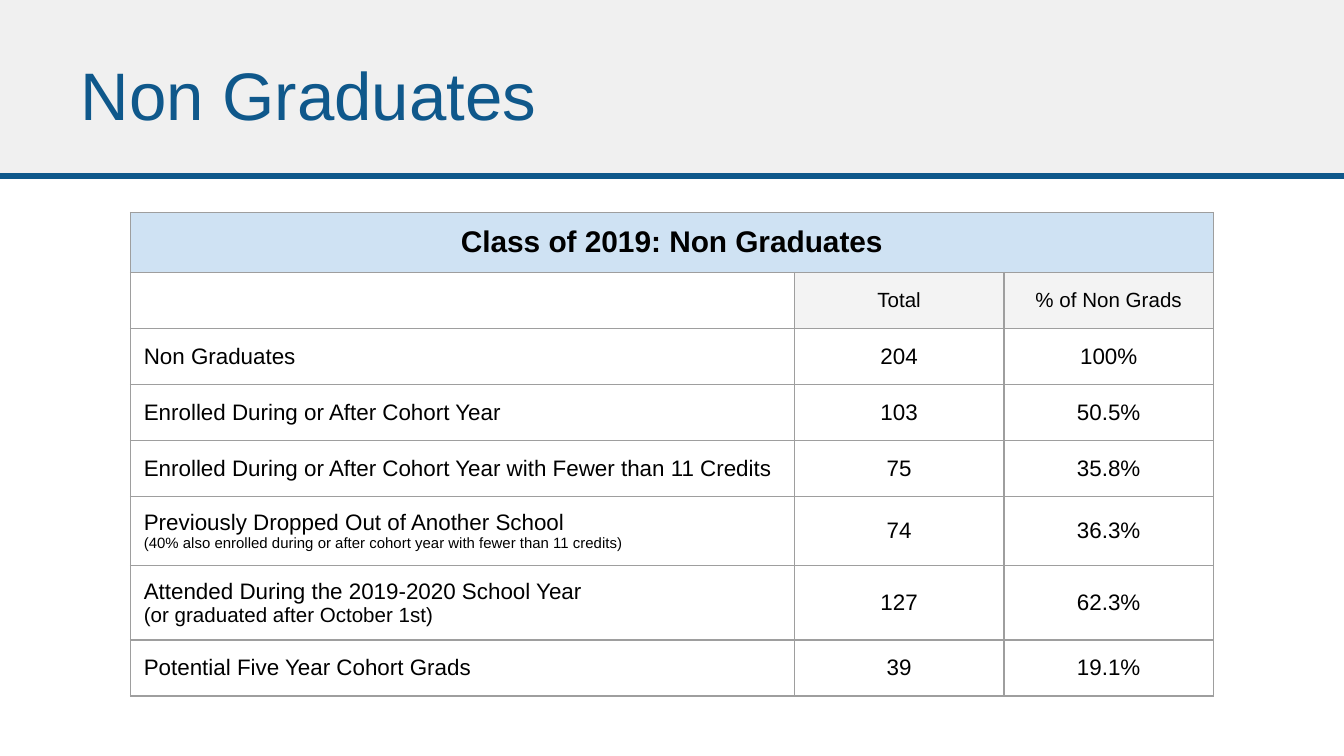
import pptx
import pptx.util
import pptx.dml.color
import pptx.enum.shapes
import pptx.enum.text
import pptx.oxml
import pptx.oxml.ns

WIDTH = pptx.util.Inches(10)
HEIGHT = WIDTH * 9 // 16
BAND_HEIGHT = pptx.util.Inches(1.31)
MARGIN = pptx.util.Inches(0.1)
COLUMN_WIDTHS = [4.94, 1.56, 1.56]
ROW_HEIGHT = pptx.util.Pt(30)
COLORS = {
    "band": "F0F0F0",
    "accent": "0F588B",
    "heading": "CFE2F3",
    "subheading": "F3F3F3",
    "body": "FFFFFF",
    "text": "000000",
    "border": "9E9E9E",
}
TABLE_TITLE = "Class of 2019: Non Graduates"
COLUMN_HEADS = ["", "Total", "% of Non Grads"]
GROUPS = [
    ([("Non Graduates", 12)], "204", "100%"),
    ([("Enrolled During or After Cohort Year", 12)], "103", "50.5%"),
    ([("Enrolled During or After Cohort Year with Fewer than 11 Credits", 12)], "75", "35.8%"),
    ([("Previously Dropped Out of Another School", 12),
      ("(40% also enrolled during or after cohort year with fewer than 11 credits)", 8)], "74", "36.3%"),
    ([("Attended During the 2019-2020 School Year ", 12),
      ("(or graduated after October 1st)", 11)], "127", "62.3%"),
    ([("Potential Five Year Cohort Grads", 12)], "39", "19.1%"),
]


def rgb(name):
    """Return the named colour."""
    return pptx.dml.color.RGBColor.from_string(COLORS[name])


def write(frame, lines, color="text", bold=False, align="LEFT"):
    """Fill a text frame with one paragraph of (text, size) lines."""
    paragraph = frame.paragraphs[0]
    paragraph.alignment = getattr(pptx.enum.text.PP_ALIGN, align)
    for index, (text, size) in enumerate(lines):
        if index:
            paragraph.add_line_break()
        if text:
            run = paragraph.add_run()
            run.text = text
            run.font.name = "Arial"
            run.font.size = pptx.util.Pt(size)
            run.font.bold = bold
            run.font.color.rgb = rgb(color)
    paragraph._p.get_or_add_endParaRPr().set("sz", str(lines[-1][1] * 100))


def add_header(slide):
    """Draw the header band and rule, and place the title over them."""
    band = slide.shapes.add_shape(
        pptx.enum.shapes.MSO_SHAPE.RECTANGLE, 0, 0, WIDTH, BAND_HEIGHT)
    band.shadow.inherit = False
    band.fill.solid()
    band.fill.fore_color.rgb = rgb("band")
    band.line.fill.background()

    rule = slide.shapes.add_connector(
        pptx.enum.shapes.MSO_CONNECTOR.STRAIGHT, 0, BAND_HEIGHT, WIDTH, BAND_HEIGHT)
    rule.line.color.rgb = rgb("accent")
    rule.line.width = pptx.util.Pt(3)
    rule._element.spPr.append(pptx.oxml.parse_xml(
        f"<a:effectLst {pptx.oxml.ns.nsdecls('a')}/>"))

    title = slide.shapes.title
    title.left, title.top, title.width, title.height = map(
        pptx.util.Inches, (0.5, 0.23, 7.67, 0.94))
    frame = title.text_frame
    frame.margin_left = frame.margin_right = frame.margin_top = frame.margin_bottom = MARGIN
    frame.vertical_anchor = pptx.enum.text.MSO_ANCHOR.MIDDLE
    frame.auto_size = pptx.enum.text.MSO_AUTO_SIZE.NONE
    frame.word_wrap = True
    write(frame, [("Non Graduates", 36)], color="accent")
    slide.shapes._spTree.append(title._element)


def format_cell(cell, fill, anchor="MIDDLE"):
    """Give a cell its borders, fill, margins and anchor."""
    properties = cell._tc.get_or_add_tcPr()
    for side in "LRTB":
        properties.append(pptx.oxml.parse_xml(
            f"<a:ln{side} {pptx.oxml.ns.nsdecls('a')} w='{pptx.util.Pt(0.75)}'><a:solidFill>"
            f"<a:srgbClr val='{COLORS['border']}'/></a:solidFill></a:ln{side}>"))
    cell.fill.solid()
    cell.fill.fore_color.rgb = rgb(fill)
    cell.margin_left = cell.margin_right = cell.margin_top = cell.margin_bottom = MARGIN
    cell.vertical_anchor = getattr(pptx.enum.text.MSO_ANCHOR, anchor)


def add_graduate_table(slide):
    """Add the table of non graduate groups."""
    row_count = len(GROUPS) + 2
    table = slide.shapes.add_table(
        row_count, len(COLUMN_WIDTHS), pptx.util.Inches(0.97), pptx.util.Inches(1.58),
        pptx.util.Inches(sum(COLUMN_WIDTHS)), ROW_HEIGHT * row_count).table
    table.first_row = table.horz_banding = False
    for column, width in zip(table.columns, COLUMN_WIDTHS):
        column.width = pptx.util.Inches(width)
    for row in table.rows:
        row.height = ROW_HEIGHT

    heading = table.cell(0, 0)
    heading.merge(table.cell(0, len(COLUMN_WIDTHS) - 1))
    for cell in table.rows[0].cells:
        format_cell(cell, "heading", anchor="TOP")
    write(heading.text_frame, [(TABLE_TITLE, 16)], bold=True, align="CENTER")

    for cell, text in zip(table.rows[1].cells, COLUMN_HEADS):
        format_cell(cell, "subheading" if text else "body")
        write(cell.text_frame, [(text, 11)], align="CENTER")

    for row_index, (label, total, share) in enumerate(GROUPS, start=2):
        for column_index, lines in enumerate((label, [(total, 12)], [(share, 12)])):
            cell = table.cell(row_index, column_index)
            format_cell(cell, "body")
            write(cell.text_frame, lines, align="CENTER" if column_index else "LEFT")


def main():
    """Build and save the slide."""
    deck = pptx.Presentation()
    deck.slide_width, deck.slide_height = WIDTH, HEIGHT
    slide = deck.slides.add_slide(deck.slide_layouts.get_by_name("Title Only"))
    add_header(slide)
    add_graduate_table(slide)
    deck.save("out.pptx")


if __name__ == "__main__":
    main()
